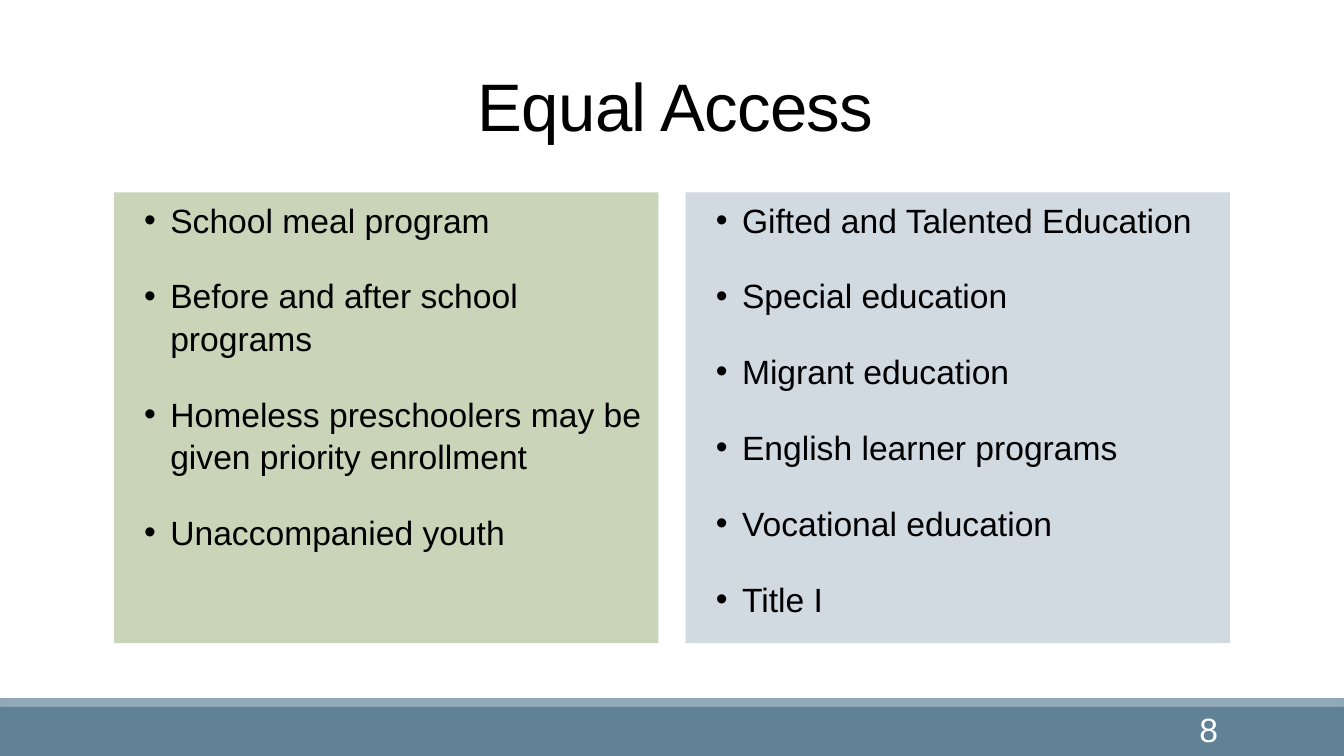
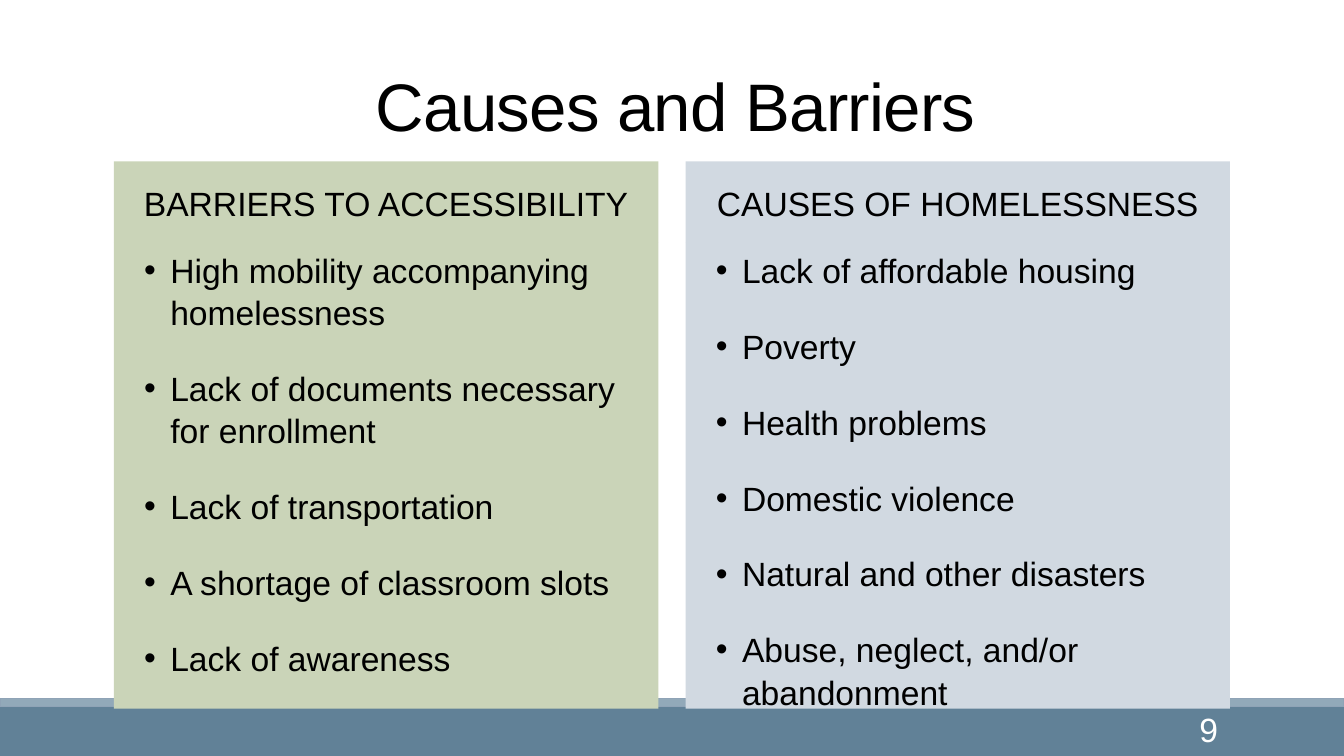
from dataclasses import dataclass

from lxml.etree import SubElement
from pptx import Presentation
from pptx.dml.color import RGBColor
from pptx.enum.shapes import MSO_SHAPE
from pptx.enum.text import MSO_ANCHOR, PP_ALIGN
from pptx.oxml.ns import qn
from pptx.util import Inches, Pt


@dataclass(frozen=True)
class Theme:
    font: str = "Arial"
    ink: str = "000000"
    paper: str = "FFFFFF"
    footer: str = "618197"
    stripe: str = "92A9B9"
    stripe_line: str = "8FA3B6"
    panels: tuple = ("CAD4B8", "D1D9E1")
    title_size: int = 48
    text_size: int = 24
    title_tracking: int = -50
    title_spacing: float = 0.85
    text_spacing: float = 1.05
    bullet_gap: int = 12


THEME = Theme()
SLIDE_WIDTH, SLIDE_HEIGHT = 13.33, 7.5
FOOTER_TOP, STRIPE_HEIGHT = 7.01, 0.08
PANEL_LEFT, PANEL_WIDTH, PANEL_GAP = 1.13, 5.4, 0.27
HEADING_HEIGHT = 0.81
BULLET_INDENT, BULLET_HANGING = 0.51, 0.26

PAGES = [
    {
        "number": 8,
        "title": "Equal Access",
        "top": 1.91,
        "height": 4.47,
        "headings": (None, None),
        "lists": (
            [
                "School meal program",
                "Before and after school programs",
                "Homeless preschoolers may be given priority enrollment",
                "Unaccompanied youth",
            ],
            [
                "Gifted and Talented Education",
                "Special education",
                "Migrant education",
                "English learner programs",
                "Vocational education",
                "Title I",
            ],
        ),
    },
    {
        "number": 9,
        "title": "Causes and Barriers",
        "top": 2.41,
        "height": 4.62,
        "headings": ("BARRIERS TO ACCESSIBILITY", "CAUSES OF HOMELESSNESS"),
        "lists": (
            [
                "High mobility accompanying homelessness",
                "Lack of documents necessary for enrollment",
                "Lack of transportation",
                "A shortage of classroom slots",
                "Lack of awareness",
            ],
            [
                "Lack of affordable housing",
                "Poverty",
                "Health problems",
                "Domestic violence",
                "Natural and other disasters",
                "Abuse, neglect, and/or abandonment",
            ],
        ),
    },
]


def apply_format(target, values):
    for name, value in values.items():
        setattr(target, name, value)


def add_rectangle(page, left, top, width, height, fill, line=None):
    box = page.shapes.add_shape(
        MSO_SHAPE.RECTANGLE, *map(Inches, (left, top, width, height))
    )
    box.shadow.inherit = False
    box.fill.solid()
    box.fill.fore_color.rgb = RGBColor.from_string(fill)
    if line:
        box.line.color.rgb = RGBColor.from_string(line)
        box.line.width = Pt(1.25)
    else:
        box.line.fill.background()
    return box


def write_para(para, text, size, color, **layout):
    span = para.add_run()
    span.text = text
    apply_format(span.font, {"name": THEME.font, "size": Pt(size)})
    span.font.color.rgb = RGBColor.from_string(color)
    apply_format(para, layout)
    return span


def write_line(box, text, size, color, **layout):
    apply_format(
        box.text_frame,
        {"word_wrap": True, "vertical_anchor": MSO_ANCHOR.MIDDLE},
    )
    return write_para(box.text_frame.paragraphs[0], text, size, color, **layout)


def add_bullet(para):
    properties = para._p.get_or_add_pPr()
    properties.set("marL", str(Inches(BULLET_INDENT)))
    properties.set("indent", str(-Inches(BULLET_HANGING)))
    SubElement(properties, qn("a:buFont")).set("typeface", THEME.font)
    SubElement(properties, qn("a:buChar")).set("char", "•")


def add_footer(page, number):
    add_rectangle(
        page, 0, FOOTER_TOP, SLIDE_WIDTH, SLIDE_HEIGHT - FOOTER_TOP, THEME.footer
    )
    add_rectangle(
        page, 0, FOOTER_TOP - STRIPE_HEIGHT, SLIDE_WIDTH, STRIPE_HEIGHT,
        THEME.stripe, THEME.stripe_line,
    )
    box = page.shapes.add_textbox(*map(Inches, (10.75, 7.03, 1.43, 0.4)))
    write_line(
        box, str(number), THEME.text_size, THEME.paper, alignment=PP_ALIGN.RIGHT
    )


def add_title(page, text):
    box = page.shapes.add_textbox(*map(Inches, (1.2, 0.31, 11, 1.59)))
    span = write_line(
        box, text, THEME.title_size, THEME.ink,
        alignment=PP_ALIGN.CENTER, line_spacing=THEME.title_spacing,
    )
    span.font._element.set("spc", str(THEME.title_tracking))


def add_heading(page, left, bottom, fill, text):
    box = add_rectangle(
        page, left, bottom - HEADING_HEIGHT, PANEL_WIDTH, HEADING_HEIGHT, fill
    )
    write_line(
        box, text, THEME.text_size, THEME.ink,
        alignment=PP_ALIGN.CENTER, line_spacing=THEME.text_spacing,
    )


def add_list(page, left, top, height, fill, items):
    box = add_rectangle(page, left, top, PANEL_WIDTH, height, fill)
    frame = box.text_frame
    apply_format(frame, {"word_wrap": True, "vertical_anchor": MSO_ANCHOR.TOP})
    sides = ("left", "top", "right", "bottom")
    apply_format(frame, {f"margin_{side}": Inches(0.05) for side in sides})
    for index, item in enumerate(items):
        para = frame.add_paragraph() if index else frame.paragraphs[0]
        add_bullet(para)
        write_para(
            para, item, THEME.text_size, THEME.ink,
            alignment=PP_ALIGN.LEFT,
            line_spacing=THEME.text_spacing,
            space_before=Pt(THEME.bullet_gap if index else 0),
            space_after=Pt(THEME.bullet_gap),
        )


def add_page(deck, content):
    page = deck.slides.add_slide(deck.slide_layouts[6])
    add_footer(page, content["number"])
    add_title(page, content["title"])
    columns = zip(THEME.panels, content["headings"], content["lists"])
    for index, (fill, heading, items) in enumerate(columns):
        left = PANEL_LEFT + index * (PANEL_WIDTH + PANEL_GAP)
        if heading:
            add_heading(page, left, content["top"], fill, heading)
        add_list(page, left, content["top"], content["height"], fill, items)


def main():
    deck = Presentation()
    apply_format(
        deck,
        {"slide_width": Inches(SLIDE_WIDTH), "slide_height": Inches(SLIDE_HEIGHT)},
    )
    for content in PAGES:
        add_page(deck, content)
    deck.save("out.pptx")


if __name__ == "__main__":
    main()
